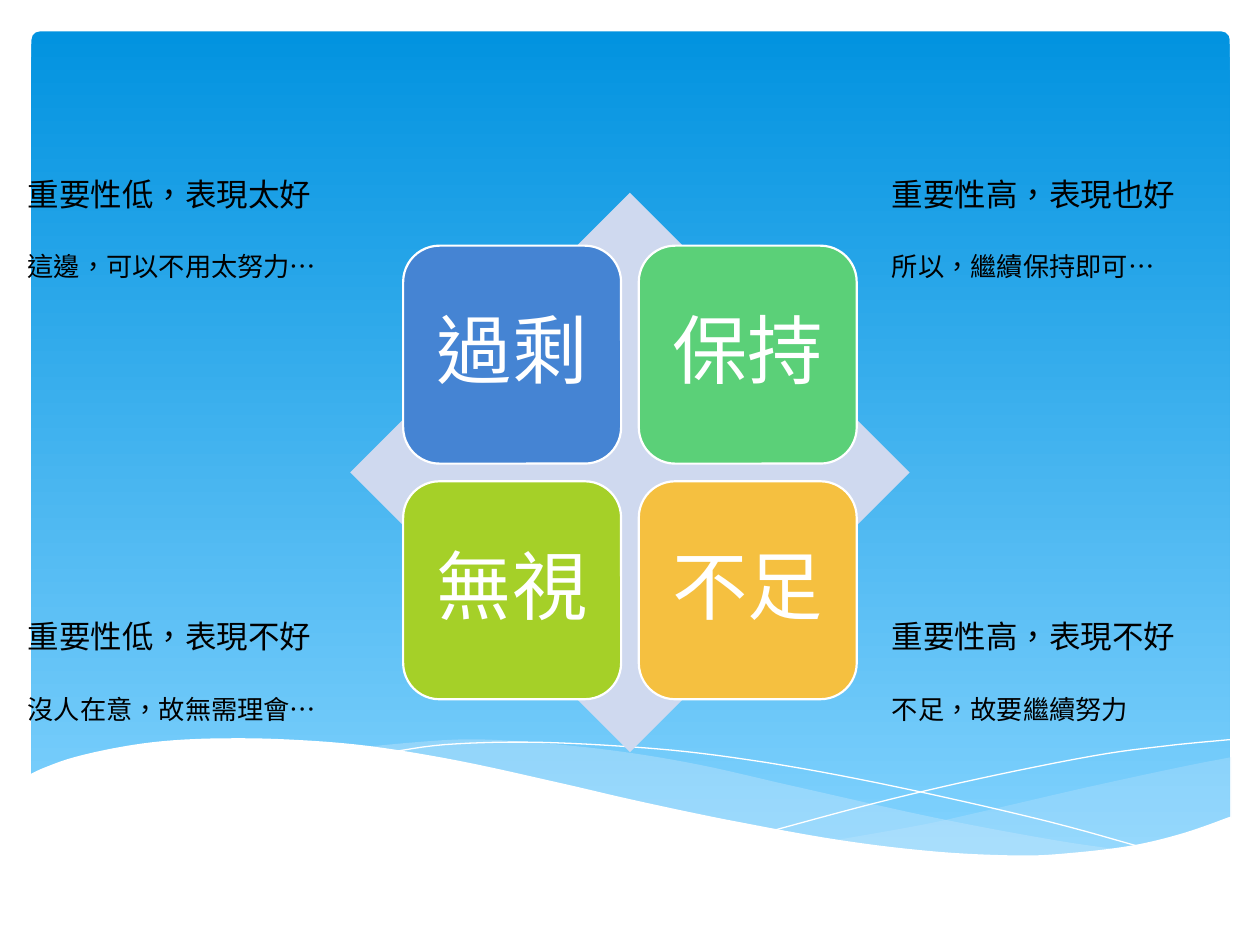
from lxml import etree
from pptx import Presentation
from pptx.dml.color import RGBColor
from pptx.enum.lang import MSO_LANGUAGE_ID
from pptx.enum.shapes import MSO_SHAPE
from pptx.enum.text import MSO_ANCHOR, PP_ALIGN
from pptx.oxml.ns import qn
from pptx.util import Inches, Pt

ROUNDED, DIAMOND = MSO_SHAPE.ROUNDED_RECTANGLE, MSO_SHAPE.DIAMOND
CENTER, LEFT = PP_ALIGN.CENTER, PP_ALIGN.LEFT
MIDDLE = MSO_ANCHOR.MIDDLE
CHINESE = MSO_LANGUAGE_ID.TRADITIONAL_CHINESE
WIDTH, HEIGHT = 10, 7.5
CENTER_X, CENTER_Y = WIDTH / 2, HEIGHT / 2
DIAMOND_SIZE, TILE_SIZE, TILE_PITCH = 4.44, 1.73, 1.87
NOTE_COLUMNS, NOTE_ROWS = (0.12, 6.98), (1.34, 4.85)

QUADRANTS = [
    (0, 0, "過剩", "4584D3", "重要性低，表現太好", "這邊，可以不用太努力…"),
    (1, 0, "保持", "5BD078", "重要性高，表現也好", "所以，繼續保持即可…"),
    (0, 1, "無視", "A5D028", "重要性低，表現不好", "沒人在意，故無需理會…"),
    (1, 1, "不足", "F5C040", "重要性高，表現不好", "不足，故要繼續努力"),
]

RIGHT_WAVE = [
    [(9.77, 6.01), (9.36, 6.09), (8.62, 6.25), (7.8, 6.44), (7.3, 6.55), (6.62, 6.67)],
    [(6.62, 6.67), (7.06, 6.73), (7.58, 6.78), (8.04, 6.8), (8.55, 6.78),
     (8.98, 6.72), (9.37, 6.63), (9.77, 6.49)],
]
MIDDLE_WAVE = [
    [(8.94, 6.75), (8.38, 6.67), (7.42, 6.49), (6.3, 6.24), (5.55, 6.07),
     (4.89, 5.96), (4.2, 5.89), (3.62, 5.87), (2.87, 5.93)],
    [(2.87, 5.93), (3.63, 6.04), (4.5, 6.24), (5.3, 6.42), (6.02, 6.57),
     (6.66, 6.68), (7.23, 6.76), (7.74, 6.79), (8.19, 6.8), (8.94, 6.75)],
]
FALLING_LINE = [[(3.1, 5.97), (3.53, 5.91), (4.17, 5.89), (4.89, 5.92), (5.57, 5.98),
                 (6.37, 6.1), (7.28, 6.28), (8.32, 6.52), (9.08, 6.73)]]
RISING_LINE = [[(6.14, 6.59), (6.96, 6.37), (7.77, 6.18), (8.67, 6),
                (9.25, 5.92), (9.76, 5.87)]]
WHITE_WAVE = [
    [(9.77, 6.48), (9.4, 6.61), (8.99, 6.71), (8.5, 6.77), (8.09, 6.79),
     (7.44, 6.76), (6.68, 6.67), (5.79, 6.51), (5.03, 6.35), (4.47, 6.22),
     (3.65, 6.04), (2.92, 5.92), (2.3, 5.87), (1.77, 5.86), (1.32, 5.88),
     (0.95, 5.93), (0.59, 6.01), (0.36, 6.09), (0.23, 6.15)],
    [(0.23, 7.31), (9.77, 7.31)],
]


def color(hex_code):
    return RGBColor.from_string(hex_code)


def smooth_curve(points, steps=6):
    ends = [points[0], *points, points[-1]]
    curve = [points[0]]
    for before, start, end, after in zip(ends, ends[1:], ends[2:], ends[3:]):
        for step in range(1, steps + 1):
            t = step / steps
            curve.append(tuple(
                b + ((c - a) * t + (2 * a - 5 * b + 4 * c - d) * t ** 2
                     + (3 * b - a - 3 * c + d) * t ** 3) / 2
                for a, b, c, d in zip(before, start, end, after)))
    return curve


def style_shape(shape, fill=None, line=None, line_width=0, opacity=100):
    shape.shadow.inherit = False
    if fill:
        shape.fill.solid()
        shape.fill.fore_color.rgb = color(fill)
        if opacity < 100:
            tone = shape.fill._xPr.find(".//" + qn("a:srgbClr"))
            etree.SubElement(tone, qn("a:alpha"), val=str(opacity * 1000))
    else:
        shape.fill.background()
    if line:
        shape.line.color.rgb = color(line)
        shape.line.width = Pt(line_width)
    else:
        shape.line.fill.background()


def add_preset(page, kind, left, top, width, height, **style):
    shape = page.shapes.add_shape(
        kind, Inches(left), Inches(top), Inches(width), Inches(height))
    style_shape(shape, **style)
    return shape


def add_wave(page, curves, closed=True, **style):
    points = [(Inches(x), Inches(y)) for curve in curves for x, y in smooth_curve(curve)]
    builder = page.shapes.build_freeform(*points[0])
    builder.add_line_segments(points[1:], close=closed)
    style_shape(builder.convert_to_shape(), **style)


def write_text(para, text, size=18, font="Noto Sans CJK SC", fill="000000",
               align=LEFT, before=0, spacing=1.0):
    para.alignment = align
    para.space_before = Pt(before)
    para.line_spacing = spacing
    span = para.add_run()
    span.text = text
    span.font.size = Pt(size)
    span.font.name = font
    span.font.language_id = CHINESE
    span.font.color.rgb = color(fill)


def add_backdrop(page):
    panel = add_preset(page, ROUNDED, 0.25, 0.25, 9.51, 6.6)
    panel.adjustments[0] = 0.01
    panel.fill.gradient()
    panel.fill.gradient_angle = 270
    for stop, tone in zip(panel.fill.gradient_stops, ("0293E0", "83D3FE")):
        stop.color.rgb = color(tone)
    add_wave(page, RIGHT_WAVE, fill="C6E7FC", opacity=29)
    add_wave(page, MIDDLE_WAVE, fill="C6E7FC", opacity=40)
    for curves in (FALLING_LINE, RISING_LINE):
        add_wave(page, curves, closed=False, line="FFFFFF")
    add_wave(page, WHITE_WAVE, fill="FFFFFF")


def add_tile(page, column, row, label, fill):
    left = CENTER_X + (column - 0.5) * TILE_PITCH - TILE_SIZE / 2
    top = CENTER_Y + (row - 0.5) * TILE_PITCH - TILE_SIZE / 2
    tile = add_preset(page, ROUNDED, left, top, TILE_SIZE, TILE_SIZE,
                      fill=fill, line="FFFFFF", line_width=1.25)
    frame = tile.text_frame
    frame.word_wrap = True
    frame.vertical_anchor = MIDDLE
    frame.margin_left = frame.margin_right = Inches(0.17)
    frame.margin_top = frame.margin_bottom = Inches(0.17)
    write_text(frame.paragraphs[0], label, size=43, font="Cabin", fill="FFFFFF",
               align=CENTER, spacing=0.9)


def add_note(page, column, row, heading, advice):
    box = page.shapes.add_textbox(
        Inches(NOTE_COLUMNS[column]), Inches(NOTE_ROWS[row]), Inches(2.82), Inches(0.96))
    frame = box.text_frame
    frame.word_wrap = True
    write_text(frame.paragraphs[0], heading)
    write_text(frame.add_paragraph(), advice, size=15, before=21.6)


def main():
    deck = Presentation()
    deck.slide_width, deck.slide_height = Inches(WIDTH), Inches(HEIGHT)
    page = deck.slides.add_slide(deck.slide_layouts[6])
    add_backdrop(page)
    add_preset(page, DIAMOND, CENTER_X - DIAMOND_SIZE / 2, CENTER_Y - DIAMOND_SIZE / 2,
               DIAMOND_SIZE, DIAMOND_SIZE, fill="CFD9EF")
    for column, row, label, fill, heading, advice in QUADRANTS:
        add_tile(page, column, row, label, fill)
        add_note(page, column, row, heading, advice)
    deck.save("out.pptx")


if __name__ == "__main__":
    main()
